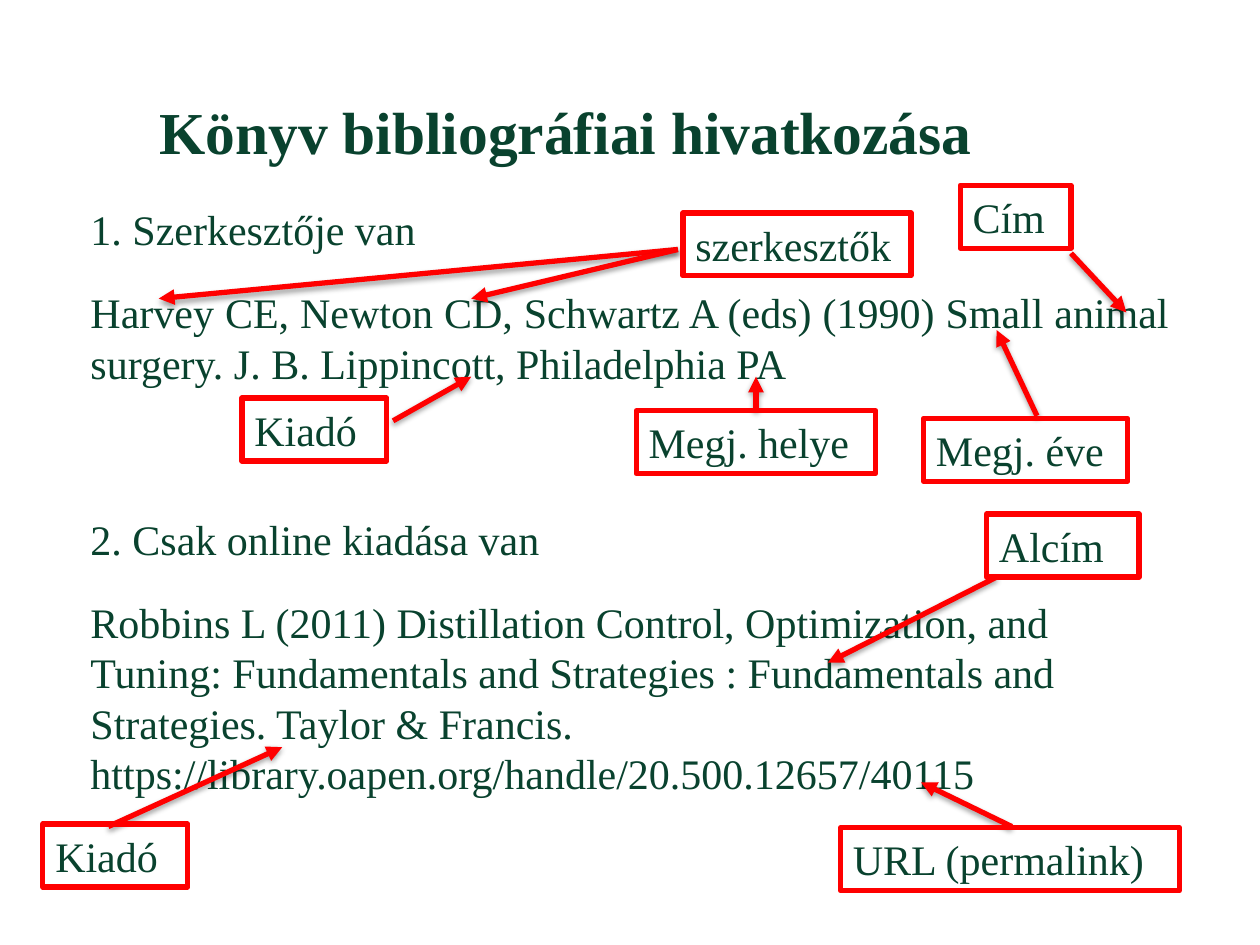
import pptx
import pptx.dml.color
import pptx.enum.shapes
import pptx.enum.text
import pptx.oxml
import pptx.util

COLS, ROWS = 100, 75
WIDE, HIGH = pptx.util.Inches(10), pptx.util.Inches(7.5)
HUES = {"ink": "09422E", "mark": "FF0000", "shade": "000000"}
ALIGN = pptx.enum.text.PP_ALIGN
ANCHOR = pptx.enum.text.MSO_ANCHOR
SPACE = 'xmlns:a="http://schemas.openxmlformats.org/drawingml/2006/main"'
SHADE = (
    f'<a:effectLst {SPACE}><a:outerShdw blurRad="40000" dist="20000" '
    f'dir="5400000" rotWithShape="0"><a:srgbClr val="{HUES["shade"]}">'
    '<a:alpha val="38000"/></a:srgbClr></a:outerShdw></a:effectLst>'
)
HEAD = f'<a:tailEnd {SPACE} type="triangle"/>'

FONT = {"name": "Times New Roman", "size": pptx.util.Pt(24), "bold": False}
BOLD = {**FONT, "size": pptx.util.Pt(34), "bold": True}
LEAD = {"alignment": ALIGN.LEFT, "line_spacing": pptx.util.Pt(28.8)}
FRAME = {"word_wrap": True, "vertical_anchor": ANCHOR.TOP}

# Text, alignment, space before in points
BODY = [
    ("1. Szerkesztője van", ALIGN.JUSTIFY, 0),
    ("Harvey CE, Newton CD, Schwartz A (eds) (1990) Small animal surgery. "
     "J. B. Lippincott, Philadelphia PA", ALIGN.JUSTIFY, 18.6),
    ("2. Csak online kiadása van", ALIGN.JUSTIFY, 71.8),
    ("Robbins L (2011) Distillation Control, Optimization, and Tuning: "
     "Fundamentals and Strategies : Fundamentals and Strategies. "
     "Taylor & Francis. https://library.oapen.org/handle/20.500.12657/40115",
     ALIGN.LEFT, 18.6),
]

# Text, box, arrow start and arrow tips, both counted from the box corner
NOTES = [
    ("szerkesztők", (54.2, 16.9, 18.1, 5), (-0.4, 2.9),
     [(-41.6, 6.8), (-16.8, 6.8)]),
    ("Megj. éve", (73.3, 33.2, 16.2, 5), (9, -0.2), [(5.8, -7)]),
    ("Cím", (76.2, 14.7, 8.8, 5), (8.8, 5.4), [(13.2, 10.1)]),
    ("Kiadó", (19.2, 31.6, 11.5, 5), (12, 1.8), [(18.2, -1.7)]),
    ("Megj. helye", (50.5, 32.6, 19, 5), (9.5, 0), [(9.5, -2.7)]),
    ("Alcím", (78.3, 40.8, 12.1, 5), (0.8, 5), [(-12.6, 11.8)]),
    ("Kiadó", (3.4, 65.4, 11.5, 5), (5.2, 0.2), [(19, -6.1)]),
    ("URL (permalink)", (66.7, 65.7, 26.9, 5), (13.6, -0.1), [(6.4, -3.6)]),
]


def grid(*cells):
    """Turn column and row counts, in turn, into lengths."""
    units = (WIDE / COLS, HIGH / ROWS)
    return [round(n * units[i % 2]) for i, n in enumerate(cells)]


def hue(name):
    return pptx.dml.color.RGBColor.from_string(HUES[name])


def style(item, values):
    for key, value in values.items():
        setattr(item, key, value)


def write(para, text, font, form):
    style(para, form)
    run = para.add_run()
    run.text = text
    style(run.font, font)
    run.font.color.rgb = hue("ink")


def pen(line):
    line.color.rgb = hue("mark")
    line.width = pptx.util.Pt(3)


def title(slide, box):
    frame = slide.shapes.add_textbox(*grid(*box)).text_frame
    style(frame, {**FRAME, "vertical_anchor": ANCHOR.MIDDLE})
    write(frame.paragraphs[0], "Könyv bibliográfiai hivatkozása", BOLD,
          {"alignment": ALIGN.LEFT})


def body(slide, box):
    frame = slide.shapes.add_textbox(*grid(*box)).text_frame
    style(frame, FRAME)
    for i, (text, align, gap) in enumerate(BODY):
        para = frame.add_paragraph() if i else frame.paragraphs[0]
        write(para, text, FONT, {**LEAD, "alignment": align,
                                 "space_before": pptx.util.Pt(gap)})


def arrow(slide, start, tip):
    kind = pptx.enum.shapes.MSO_CONNECTOR.STRAIGHT
    link = slide.shapes.add_connector(kind, *grid(*start, *tip))
    pen(link.line)
    props = link.element.spPr
    props.ln.append(pptx.oxml.parse_xml(HEAD))
    props.append(pptx.oxml.parse_xml(SHADE))


def note(slide, box, text, start, tips):
    """Place a framed label and its arrows, all measured from the box."""
    left, top = box[:2]
    for tip in tips:
        arrow(slide, (left + start[0], top + start[1]),
              (left + tip[0], top + tip[1]))
    kind = pptx.enum.shapes.MSO_SHAPE.RECTANGLE
    label = slide.shapes.add_shape(kind, *grid(*box))
    label.shadow.inherit = False
    label.fill.background()
    pen(label.line)
    style(label.text_frame, FRAME)
    write(label.text_frame.paragraphs[0], text, FONT, LEAD)


def main():
    deck = pptx.Presentation()
    style(deck, {"slide_width": WIDE, "slide_height": HIGH})
    slide = deck.slides.add_slide(deck.slide_layouts[6])
    body(slide, (6.2, 15.7, 87.6, 51))
    title(slide, (11.7, 5.8, 85, 9.2))
    for text, box, start, tips in NOTES:
        note(slide, box, text, start, tips)
    deck.save("out.pptx")


if __name__ == "__main__":
    main()
